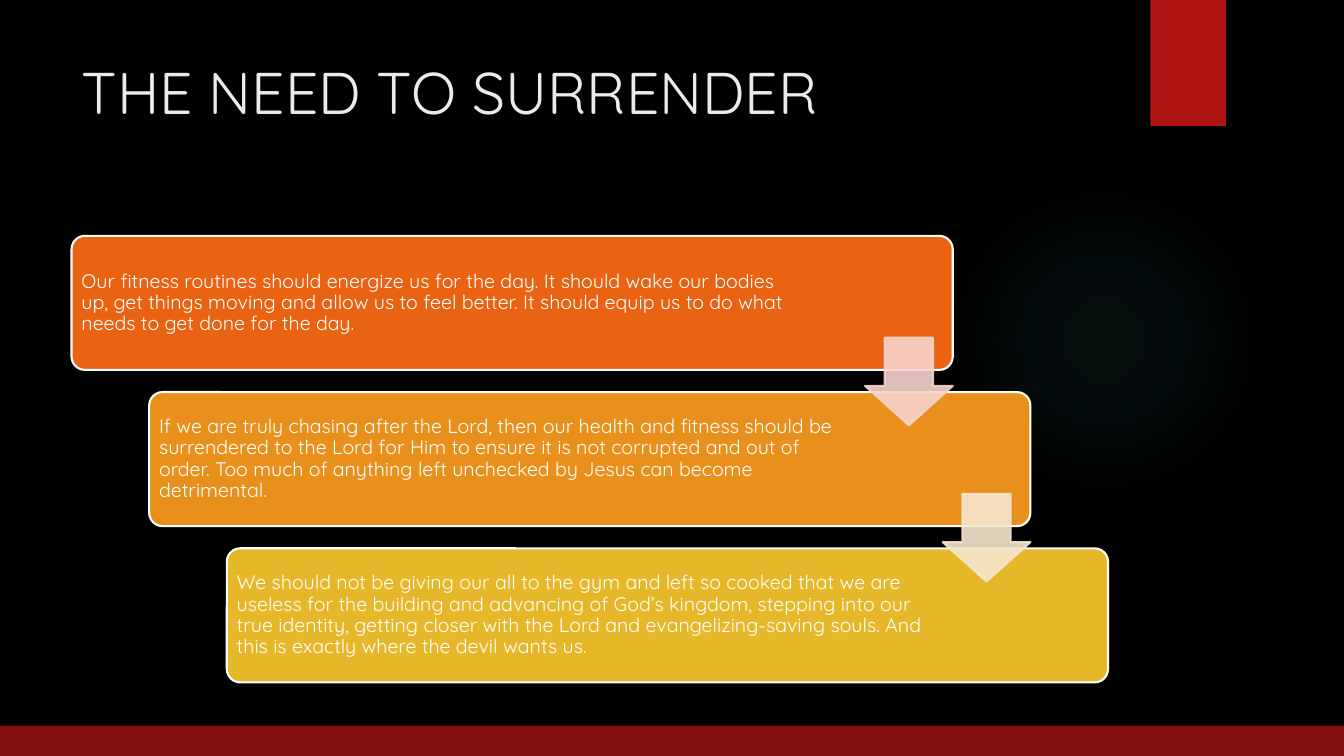
from dataclasses import dataclass

from lxml.etree import SubElement
from pptx import Presentation
from pptx.dml.color import RGBColor
from pptx.enum.shapes import MSO_SHAPE as Preset
from pptx.enum.text import MSO_ANCHOR as Anchor, MSO_AUTO_SIZE as AutoSize, PP_ALIGN as Align
from pptx.oxml import parse_xml
from pptx.oxml.ns import nsdecls, qn
from pptx.shapes.autoshape import Shape
from pptx.slide import Slide
from pptx.text.text import _Paragraph as Paragraph
from pptx.util import Inches, Pt

FONT = "Quicksand"
CARD_WIDTH, CARD_HEIGHT = 8.74, 1.33
CARD_LEFT, CARD_TOP = 0.71, 2.34
STEP_RIGHT, STEP_DOWN = 0.77, 1.55
ARROW_SIZE, ARROW_OVERLAP = 0.87, 0.32
GLOW_COLOUR = "50B9C1"
GLOW_STOPS = ((0, 7), (36, 6), (69, 0))  # position and opacity, in percent


@dataclass(frozen=True)
class Card:
    text: str
    fill: str
    right_inset: float
    arrow: str | None = None


CARDS = [
    Card("Our fitness routines should energize us for the day. It should wake our bodies up, "
         "get things moving and allow us to feel better. It should equip us to do what needs "
         "to get done for the day.", "EA6312", 1.41, "F7D3CC"),
    Card("If we are truly chasing after the Lord, then our health and fitness should be "
         "surrendered to the Lord for Him to ensure it is not corrupted and out of order. "
         "Too much of anything left unchecked by Jesus can become detrimental.",
         "E9901C", 1.69, "F5E6CD"),
    Card("We should not be giving our all to the gym and left so cooked that we are useless "
         "for the building and advancing of God’s kingdom, stepping into our true identity, "
         "getting closer with the Lord and evangelizing-saving souls. And this is exactly "
         "where the devil wants us.", "E6B729", 1.69),
]


def rgb(colour: str) -> RGBColor:
    return RGBColor.from_string(colour)


def add_block(slide: Slide, preset: Preset, left: float, top: float, width: float,
              height: float, fill: str, line: str | None = None) -> Shape:
    block = slide.shapes.add_shape(preset, Inches(left), Inches(top), Inches(width), Inches(height))
    block.shadow.inherit = False
    block.fill.solid()
    block.fill.fore_color.rgb = rgb(fill)
    if line:
        block.line.color.rgb = rgb(line)
        block.line.width = Pt(1.5)
    else:
        block.line.fill.background()
    return block


def set_font(paragraph: Paragraph, size: float, colour: str) -> None:
    paragraph.alignment = Align.LEFT
    paragraph.font.name = FONT
    paragraph.font.size = Pt(size)
    paragraph.font.color.rgb = rgb(colour)


def add_glow(slide: Slide) -> None:
    glow = add_block(slide, Preset.OVAL, 9.41, 1.83, 3.08, 3.08, GLOW_COLOUR)
    stops = "".join(
        f'<a:gs pos="{position * 1000}"><a:srgbClr val="{GLOW_COLOUR}">'
        f'<a:alpha val="{opacity * 1000}"/></a:srgbClr></a:gs>'
        for position, opacity in GLOW_STOPS)
    gradient = parse_xml(
        f'<a:gradFill {nsdecls("a")}><a:gsLst>{stops}</a:gsLst><a:path path="circle">'
        '<a:fillToRect l="50000" t="50000" r="50000" b="50000"/></a:path></a:gradFill>')
    properties = glow.element.spPr
    properties.replace(properties.find(qn("a:solidFill")), gradient)


def add_card(slide: Slide, card: Card, left: float, top: float) -> None:
    box = add_block(slide, Preset.ROUNDED_RECTANGLE, left, top, CARD_WIDTH, CARD_HEIGHT,
                    card.fill, "FFFFFF")
    box.adjustments[0] = 0.1
    frame = box.text_frame
    frame.word_wrap = True
    frame.vertical_anchor = Anchor.MIDDLE
    frame.margin_left = frame.margin_top = frame.margin_bottom = Inches(0.06)
    frame.margin_right = Inches(card.right_inset)
    frame.text = card.text
    paragraph = frame.paragraphs[0]
    paragraph.line_spacing = 0.9
    set_font(paragraph, 14, "FFFFFF")


def add_arrow(slide: Slide, colour: str, card_left: float, card_top: float) -> None:
    arrow = add_block(slide, Preset.DOWN_ARROW, card_left + CARD_WIDTH - ARROW_SIZE,
                      card_top + CARD_HEIGHT - ARROW_OVERLAP, ARROW_SIZE, ARROW_SIZE,
                      colour, colour)
    arrow.adjustments[0] = 0.55
    arrow.adjustments[1] = 0.45
    for tint in arrow.element.spPr.iter(qn("a:srgbClr")):
        SubElement(tint, qn("a:alpha")).set("val", "90000")


def main() -> None:
    deck = Presentation()
    deck.slide_width, deck.slide_height = Inches(13.33), Inches(7.5)
    slide = deck.slides.add_slide(deck.slide_layouts[5])
    slide.background.fill.solid()
    slide.background.fill.fore_color.rgb = rgb("000000")

    # Backdrop: glow, ribbon and footer band
    add_glow(slide)
    add_block(slide, Preset.RECTANGLE, 11.41, 0, 0.75, 1.25, "B01513")
    add_block(slide, Preset.RECTANGLE, 0, 7.2, 13.33, 0.3, "84100E")

    # Title
    title = slide.shapes.title
    title.left, title.top = Inches(0.71), Inches(0.5)
    title.width, title.height = Inches(10.29), Inches(1.53)
    title.text_frame.text = "THE NEED TO SURRENDER"
    title.text_frame.vertical_anchor = Anchor.TOP
    title.text_frame.auto_size = AutoSize.NONE
    set_font(title.text_frame.paragraphs[0], 42, "EBEBEB")

    # Staircase of cards, with the arrows on top
    places = [(CARD_LEFT + i * STEP_RIGHT, CARD_TOP + i * STEP_DOWN) for i in range(len(CARDS))]
    for card, place in zip(CARDS, places):
        add_card(slide, card, *place)
    for card, place in zip(CARDS, places):
        if card.arrow:
            add_arrow(slide, card.arrow, *place)

    deck.save("out.pptx")


if __name__ == "__main__":
    main()
